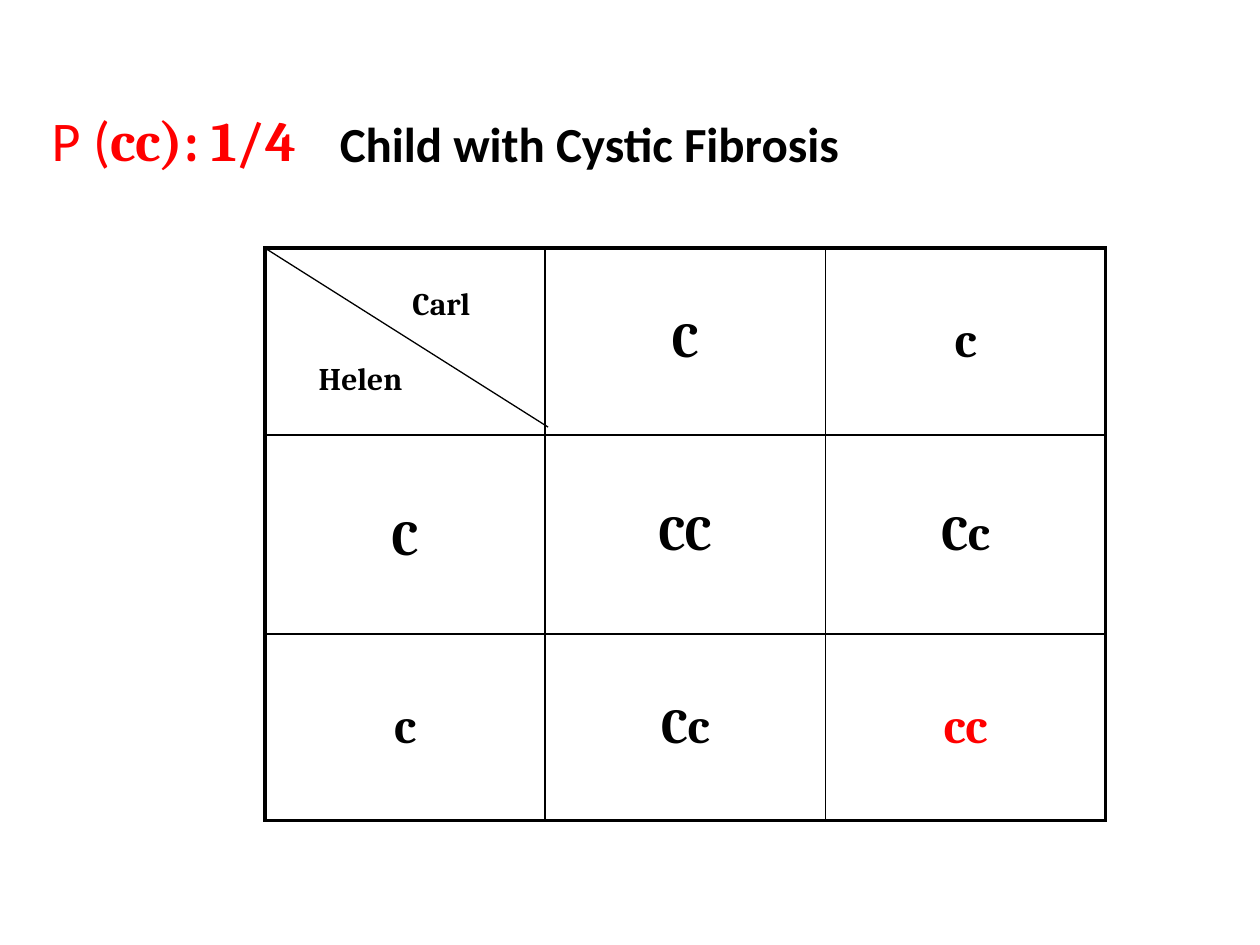
from pptx import Presentation
from pptx.dml.color import RGBColor
from pptx.enum import shapes, text
from pptx.oxml import ns
from pptx.util import Cm, Pt
from lxml import etree

BLACK = RGBColor(0, 0, 0)
RED = RGBColor(255, 0, 0)


def style(span, size, font, color, bold=True):
    span.font.size = Pt(size)
    span.font.name = font
    span.font.color.rgb = color
    span.font.bold = bold


def add_border(cell, side, width):
    border = etree.SubElement(cell._tc.get_or_add_tcPr(), ns.qn("a:" + side), w=str(Pt(width)))
    fill = etree.SubElement(border, ns.qn("a:solidFill"))
    etree.SubElement(fill, ns.qn("a:srgbClr"), val=str(BLACK))


deck = Presentation()
deck.slide_width, deck.slide_height = Cm(25.4), Cm(19.05)
page = deck.slides.add_slide(deck.slide_layouts[6])

# Punnett square: one parent's alleles across, the other's down
GENOTYPES = [["", "C", "c"], ["C", "CC", "Cc"], ["c", "Cc", "cc"]]
ROW_HEIGHTS = [3.77, 4.01, 3.76]
LEFT, TOP, COLUMN = 5.34, 5.0, 5.65
frame = page.shapes.add_table(3, 3, Cm(LEFT), Cm(TOP), Cm(3 * COLUMN), Cm(sum(ROW_HEIGHTS)))
table = frame.table
table.first_row = table.horz_banding = False
for column in table.columns:
    column.width = Cm(COLUMN)
for r, genotypes in enumerate(GENOTYPES):
    table.rows[r].height = Cm(ROW_HEIGHTS[r])
    for c, genotype in enumerate(genotypes):
        cell = table.cell(r, c)
        # Thick outer frame, thin inner lines
        outer = {"lnL": c == 0, "lnR": c == 2, "lnT": r == 0, "lnB": r == 2}
        for side, thick in outer.items():
            add_border(cell, side, 2.25 if thick else 1)
        cell.fill.background()
        if genotype:
            cell.vertical_anchor = text.MSO_ANCHOR.MIDDLE
            para = cell.text_frame.paragraphs[0]
            para.text = genotype
            para.alignment = text.PP_ALIGN.CENTER
            style(para.runs[0], 28, "Cambria", RED if genotype == "cc" else BLACK)
table.cell(1, 0).margin_top = Cm(0.33)

# Corner cell with the parents' names
corner = table.cell(0, 0)
corner.margin_top = Cm(0.79)
corner.text_frame.text = "Carl\nHelen"
for para, indent, gap in zip(corner.text_frame.paragraphs, (2.72, 0.83), (0, 22)):
    para._p.get_or_add_pPr().set("marL", str(Cm(indent)))
    para.space_before = Pt(gap)
    style(para.runs[0], 18, "Cambria", BLACK)

# Diagonal of the corner cell
diagonal = page.shapes.add_connector(
    shapes.MSO_CONNECTOR.STRAIGHT, Cm(LEFT), Cm(TOP), Cm(11.05), Cm(8.61))
diagonal.line.color.rgb = BLACK
diagonal.line.width = Pt(0.75)
etree.SubElement(diagonal._element.spPr, ns.qn("a:effectLst"))

# Heading: outcome and its probability
HEADINGS = [
    (6.6, 2.16, 12.7, 1.45, [("Child with Cystic Fibrosis", 28, "Calibri", BLACK, True)]),
    (0.79, 2.01, 5.46, 1.63, [("P (", 32, "Calibri", RED, False),
                              ("cc): 1/4", 32, "Cambria", RED, True)]),
]
for left, top, width, height, spans in HEADINGS:
    box = page.shapes.add_textbox(Cm(left), Cm(top), Cm(width), Cm(height))
    box.text_frame.word_wrap = False
    box.text_frame.auto_size = text.MSO_AUTO_SIZE.SHAPE_TO_FIT_TEXT
    for words, size, font, color, bold in spans:
        span = box.text_frame.paragraphs[0].add_run()
        span.text = words
        style(span, size, font, color, bold)

deck.save("out.pptx")
